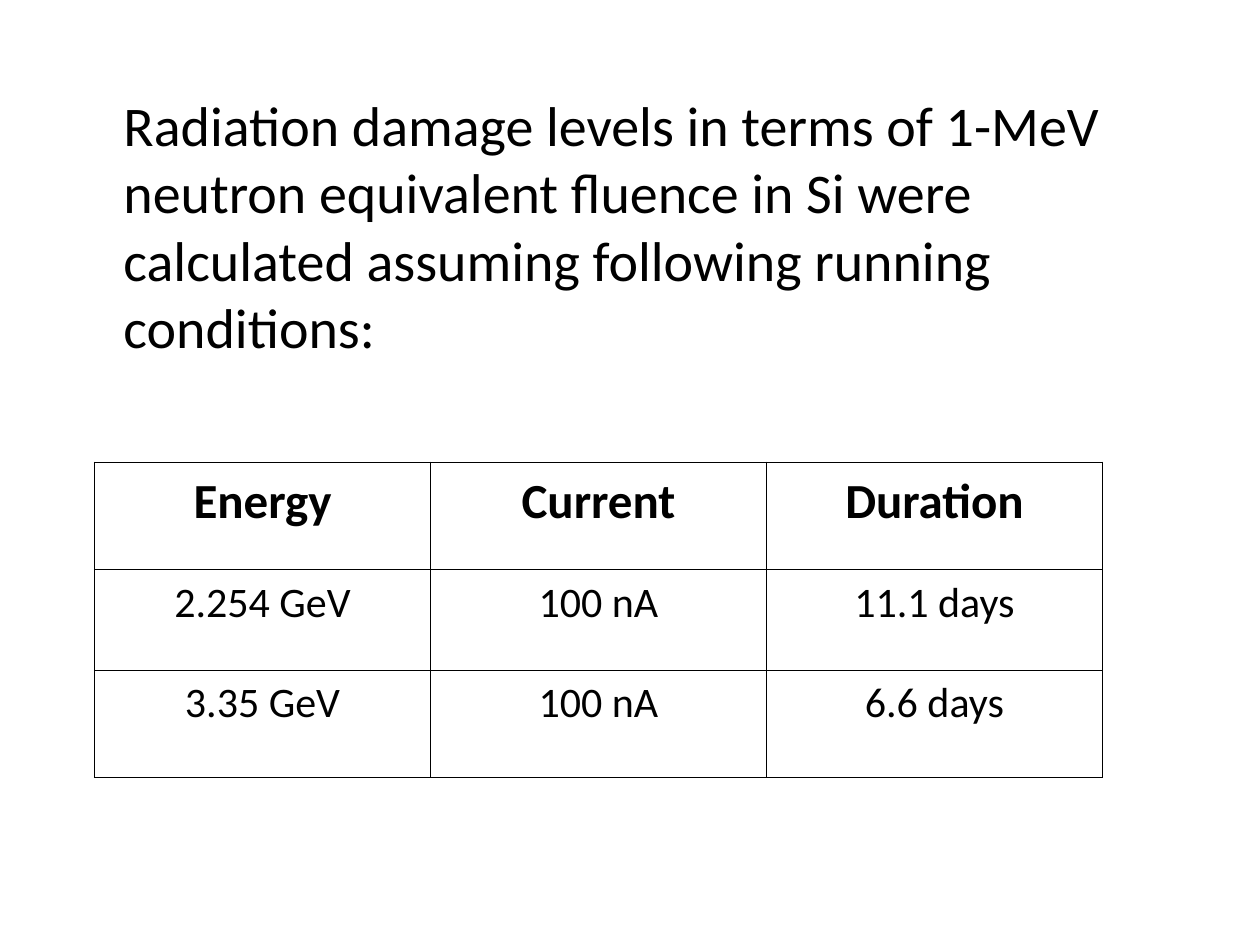
from dataclasses import dataclass

from lxml.etree import SubElement
from pptx import Presentation
from pptx.dml.color import RGBColor as RGB
from pptx.enum.text import PP_ALIGN as ALIGN
from pptx.oxml.ns import qn
from pptx.util import Inches, Pt


@dataclass(frozen=True)
class Theme:
    font: str = "Calibri"
    ink: str = "000000"
    body: int = 32
    header: int = 28
    cell: int = 24
    border: int = 1


class Deck:
    """Builds styled elements on the current slide."""

    def __init__(self, theme, width, height):
        self.theme = theme
        self.prs = Presentation()
        self.prs.slide_width, self.prs.slide_height = Inches(width), Inches(height)
        self.s = self.prs.slides.add_slide(self.prs.slide_layouts[6])

    def style(self, p, size, bold=False):
        for r in p.runs:
            r.font.name = self.theme.font
            r.font.size = Pt(size)
            r.font.bold = bold
            r.font.color.rgb = RGB.from_string(self.theme.ink)

    def text(self, text, left, top, width, height, indent):
        tf = self.s.shapes.add_textbox(*map(Inches, (left, top, width, height))).text_frame
        tf.word_wrap = True
        tf.margin_left = Inches(0.1 + indent)
        tf.text = text
        self.style(tf.paragraphs[0], self.theme.body)

    def border(self, cell):
        tc_pr = cell._tc.get_or_add_tcPr()
        for i, side in enumerate(("lnL", "lnR", "lnT", "lnB")):
            ln = tc_pr.makeelement(qn(f"a:{side}"), {"w": str(Pt(self.theme.border))})
            fill = SubElement(ln, qn("a:solidFill"))
            SubElement(fill, qn("a:srgbClr"), val=self.theme.ink)
            tc_pr.insert(i, ln)

    def table(self, rows, left, top, width, heights):
        box = map(Inches, (left, top, width, sum(heights)))
        table = self.s.shapes.add_table(len(rows), len(rows[0]), *box).table
        table.horz_banding = False
        for row, height in zip(table.rows, heights):
            row.height = Inches(height)
        for i, values in enumerate(rows):
            for j, value in enumerate(values):
                cell = table.cell(i, j)
                cell.fill.background()
                cell.margin_left = cell.margin_right = Inches(0.07)
                cell.margin_top = cell.margin_bottom = 0
                cell.text_frame.text = value
                p = cell.text_frame.paragraphs[0]
                p.alignment = ALIGN.CENTER
                p.line_spacing = 1.15
                self.style(p, self.theme.cell if i else self.theme.header, bold=i == 0)
                self.border(cell)


def main():
    deck = Deck(Theme(), 10, 7.5)
    deck.text(
        "Radiation damage levels in terms of 1-MeV neutron equivalent fluence in Si "
        "were calculated assuming following running conditions:",
        0.5, 0.67, 9, 4.95, indent=0.38,
    )
    conditions = [
        ("Energy", "Current", "Duration"),
        ("2.254 GeV", "100 nA", "11.1 days"),
        ("3.35 GeV", "100 nA", "6.6 days"),
    ]
    deck.table(conditions, 0.75, 3.67, 8, heights=(0.85, 0.8, 0.85))
    deck.prs.save("out.pptx")


if __name__ == "__main__":
    main()
